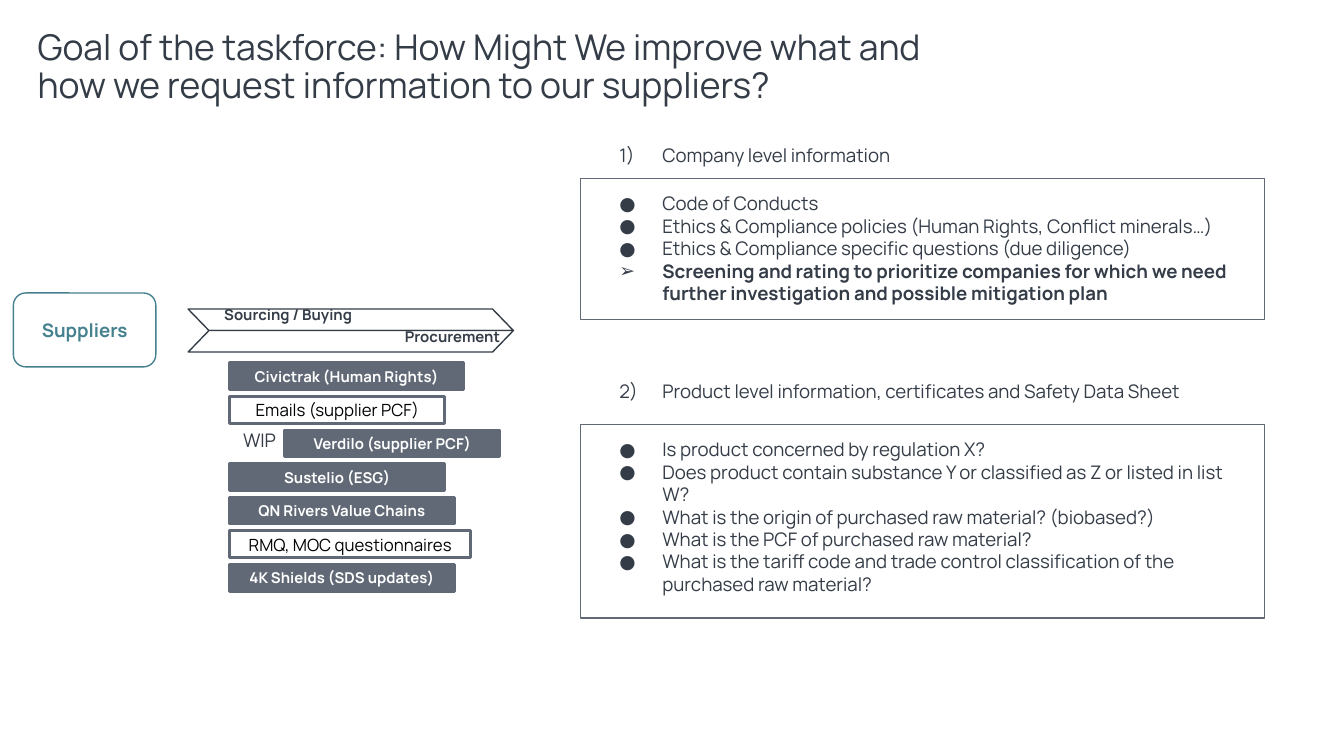
"""Build the slide on how the taskforce requests information from suppliers."""
from lxml import etree
from pptx import Presentation
from pptx.dml.color import RGBColor
from pptx.enum.shapes import MSO_SHAPE as Shape
from pptx.enum.text import MSO_ANCHOR as Anchor, PP_ALIGN as Align
from pptx.oxml.ns import qn
from pptx.util import Inches, Pt

COLORS = {"ink": "343C47", "slate": "616976", "teal": "45818E",
          "white": "FFFFFF", "black": "000000"}
FONT = "Manrope"


def add_block(parent, kind, left, top, width, height, fill, line, weight=0.75):
    block = parent.shapes.add_shape(
        kind, Inches(left), Inches(top), Inches(width), Inches(height))
    block.shadow.inherit = False
    block.fill.solid()
    block.fill.fore_color.rgb = RGBColor.from_string(COLORS[fill])
    block.line.color.rgb = RGBColor.from_string(COLORS[line])
    block.line.width = Pt(weight)
    return block


def write(box, lines, size, color="ink", bold=False, align=Align.LEFT, inset=0.1):
    frame = box.text_frame
    frame.word_wrap = True
    frame.margin_left = frame.margin_right = Inches(inset)
    frame.margin_top = frame.margin_bottom = Inches(inset)
    for index, (mark, text) in enumerate(lines):
        para = frame.add_paragraph() if index else frame.paragraphs[0]
        para.text = text
        para.alignment = align
        if mark:
            props = para._p.get_or_add_pPr()
            props.set("marL", str(Inches(0.5)))
            props.set("indent", str(Inches(-0.32)))
            tint = etree.SubElement(props, qn("a:buClr"))
            etree.SubElement(tint, qn("a:srgbClr"), val=COLORS["ink"])
            etree.SubElement(props, qn("a:buFont"), typeface=FONT)
            if isinstance(mark, int):
                etree.SubElement(props, qn("a:buAutoNum"),
                                 type="arabicParenR", startAt=str(mark))
            else:
                etree.SubElement(props, qn("a:buChar"), char=mark)
        para.font.name = FONT
        para.font.size = Pt(size)
        para.font.bold = bold or mark == "➢"
        para.font.color.rgb = RGBColor.from_string(COLORS[color])


deck = Presentation()
deck.slide_width = Inches(10)
deck.slide_height = deck.slide_width * 9 // 16
page = deck.slides.add_slide(deck.slide_layouts[6])

title = page.shapes.add_textbox(Inches(0.28), Inches(0.22), Inches(7.09), Inches(0.66))
write(title, [(None, "Goal of the taskforce: How Might We improve what and "
                     "how we request information to our suppliers?")], 19, inset=0)
title.text_frame.paragraphs[0].line_spacing = 0.9

arrow = page.shapes.add_group_shape()
for top in (2.3, 2.46):
    half = add_block(arrow, Shape.PARALLELOGRAM, 1.4, top, 2.42, 0.16, "white", "ink")
    half.adjustments[0] = 0.97
    if top == 2.3:
        half.element.spPr.find(qn("a:xfrm")).set("flipH", "1")

suppliers = add_block(page, Shape.ROUNDED_RECTANGLE, 0.1, 2.18, 1.06, 0.55, "white", "teal")
suppliers.text_frame.vertical_anchor = Anchor.MIDDLE
write(suppliers, [(None, "Suppliers")], 10, "teal", True, Align.CENTER)

tools = [
    ("Civictrak (Human Rights)", 1.71, 1.74, True),
    ("Emails (supplier PCF)", 1.71, 1.6, False),
    ("Verdilo (supplier PCF)", 2.12, 1.6, True),
    ("Sustelio (ESG)", 1.71, 1.6, True),
    ("QN Rivers Value Chains", 1.71, 1.67, True),
    ("RMQ, MOC questionnaires", 1.71, 1.79, False),
    ("4K Shields (SDS updates)", 1.71, 1.67, True),
]
for row, (name, left, width, dark) in enumerate(tools):
    tool = add_block(page, Shape.RECTANGLE, left, 2.7 + 0.25 * row, width, 0.2,
                     "slate" if dark else "white", "slate", 1.5)
    tool.text_frame.vertical_anchor = Anchor.MIDDLE
    write(tool, [(None, name)], 8 if dark else 9, "white" if dark else "black",
          dark, Align.CENTER)

for top, height in ((1.33, 1.05), (3.16, 1.44)):
    add_block(page, Shape.RECTANGLE, 4.32, top, 5.09, height, "white", "slate")

company = [
    ("●", "Code of Conducts"),
    ("●", "Ethics & Compliance policies (Human Rights, Conflict minerals…)"),
    ("●", "Ethics & Compliance specific questions (due diligence)"),
    ("➢", "Screening and rating to prioritize companies for which we need "
          "further investigation and possible mitigation plan"),
]
product = [
    ("●", "Is product concerned by regulation X?"),
    ("●", "Does product contain substance Y or classified as Z or listed in list W?"),
    ("●", "What is the origin of purchased raw material? (biobased?)"),
    ("●", "What is the PCF of purchased raw material?"),
    ("●", "What is the tariff code and trade control classification of the "
          "purchased raw material?"),
]
texts = [
    (1.57, 2.21, 2.17, 0.34, [(None, "Sourcing / Buying")], 8, True, Align.LEFT),
    (1.65, 2.37, 2.17, 0.34, [(None, "Procurement")], 8, True, Align.RIGHT),
    (1.71, 3.11, 0.45, 0.37, [(None, "WIP")], 10, False, Align.LEFT),
    (4.33, 0.99, 4.81, 0.37, [(1, "Company level information")], 10, False, Align.LEFT),
    (4.33, 1.33, 5.09, 1.21, company, 10, False, Align.LEFT),
    (4.33, 2.74, 5.09, 0.37,
     [(2, "Product level information, certificates and Safety Data Sheet")],
     10, False, Align.LEFT),
    (4.33, 3.16, 5.09, 1.38, product, 10, False, Align.LEFT),
]
for left, top, width, height, lines, size, bold, align in texts:
    box = page.shapes.add_textbox(Inches(left), Inches(top), Inches(width), Inches(height))
    write(box, lines, size, bold=bold, align=align)

deck.save("out.pptx")
